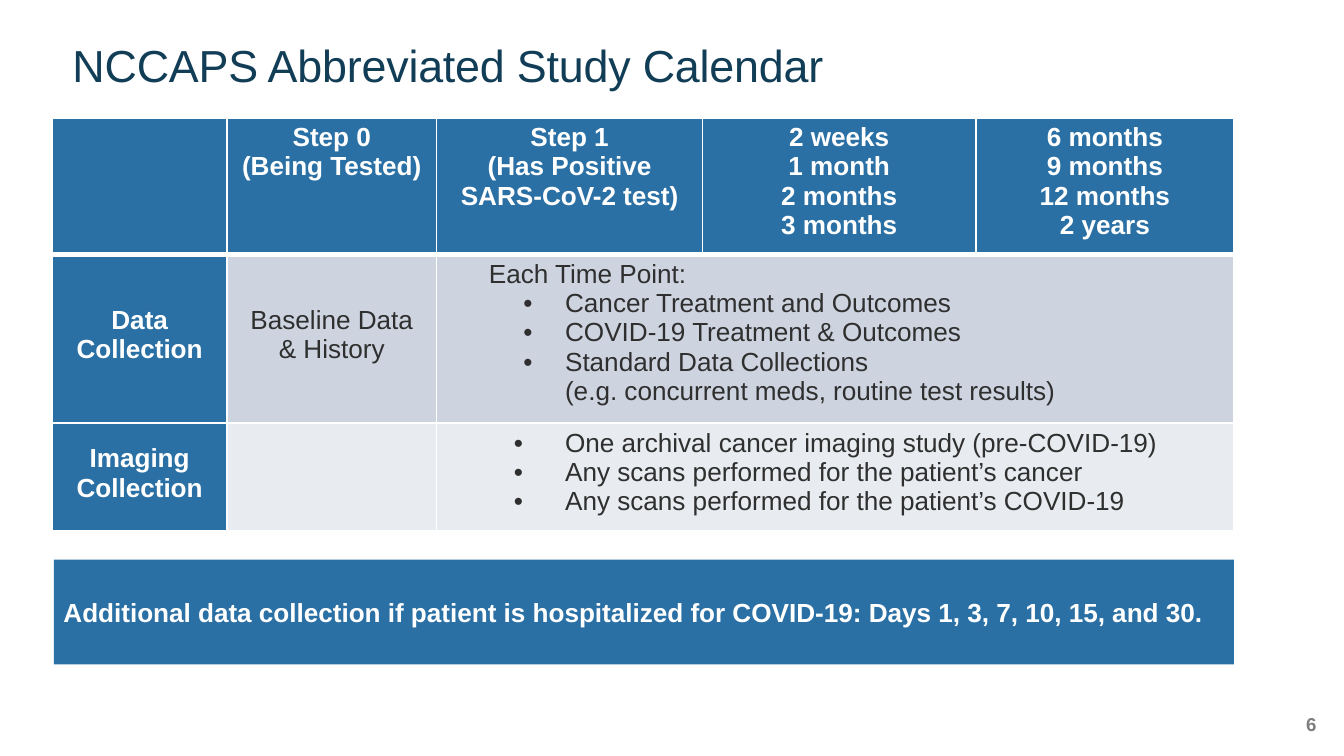
"""Build the study calendar slide."""
from lxml.etree import SubElement
from pptx import Presentation
from pptx.dml.color import RGBColor as Rgb
from pptx.enum.shapes import MSO_CONNECTOR as Link, MSO_SHAPE as Shape
from pptx.enum.text import MSO_ANCHOR as Anchor, MSO_AUTO_SIZE as Auto, PP_ALIGN as Align
from pptx.oxml.ns import qn
from pptx.util import Cm, Pt

FONT = "Arial"
HEX = {
    "blue": "2A70A4", "navy": "123D56", "ink": "2F2F2F", "white": "FFFFFF",
    "mist": "CDD4E0", "pale": "E8EBEF", "gray": "7E7E7E",
}
TITLE = "NCCAPS Abbreviated Study Calendar"
NOTE = "Additional data collection if patient is hospitalized for COVID-19: Days 1, 3, 7, 10, 15, and 30."
PAGE = "6"
HEAD = [
    [],
    ["Step 0", "(Being Tested)"],
    ["Step 1", "(Has Positive", "SARS-CoV-2 test)"],
    ["2 weeks", "1 month", "2 months", "3 months"],
    ["6 months", "9 months", "12 months", "2 years"],
]
ROWS = [
    {
        "name": ["Data", "Collection"], "base": ["Baseline Data", "& History"],
        "lead": "Each Time Point:",
        "list": ["Cancer Treatment and Outcomes", "COVID-19 Treatment & Outcomes",
                 "Standard Data Collections"],
        "tail": "(e.g. concurrent meds, routine test results)",
        "fill": "mist", "hang": 0.79, "top": 0.09, "lift": 0.15,
    },
    {
        "name": ["Imaging", "Collection"], "base": [],
        "lead": "",
        "list": ["One archival cancer imaging study (pre-COVID-19)",
                 "Any scans performed for the patient’s cancer",
                 "Any scans performed for the patient’s COVID-19"],
        "tail": "",
        "fill": "pale", "hang": 0.97, "top": 0.1, "lift": 0.12,
    },
]
WIDE = [3.3, 3.96, 5.03, 5.16, 4.88]
HIGH = [2.57, 3.18, 2.03]
LEFT, TOP = 0.99, 2.24
LEAD, TEXT = 0.99, 2.43
EDGES = [
    (0.99, 10.54, 0.99, 12.65, 1),
    (23.34, 10.54, 23.34, 12.65, 1),
    (0.99, 12.6, 23.37, 12.6, 3),
]


def rgb(name):
    return Rgb.from_string(HEX[name])


def write(para, text, color, size=14, bold=False, align=Align.LEFT, space=-3):
    para.alignment = align
    run = para.add_run()
    run.text = text
    font = run.font
    font.name, font.size, font.bold = FONT, Pt(size), bold
    font.color.rgb = rgb(color)
    run._r.get_or_add_rPr().set("spc", str(space))


def lines(frame):
    yield frame.paragraphs[0]
    while True:
        yield frame.add_paragraph()


def indent(para, left, hang=0):
    props = para._p.get_or_add_pPr()
    props.set("marL", str(Cm(left)))
    props.set("indent", str(-Cm(hang)))
    if hang:
        SubElement(props, qn("a:buFont"), typeface=FONT)
        SubElement(props, qn("a:buChar"), char="•")


def inset(box, top=0, left=0):
    box.margin_left, box.margin_top = Cm(left), Cm(top)
    box.margin_right = box.margin_bottom = 0


def style(cell, fill, row):
    props = cell._tc.get_or_add_tcPr()
    thick = {("B", 0), ("T", 1)}
    for side in "LRTB":
        width = 3 if (side, row) in thick else 1
        line = SubElement(props, qn(f"a:ln{side}"), w=str(Pt(width)))
        paint = SubElement(line, qn("a:solidFill"))
        SubElement(paint, qn("a:srgbClr"), val=HEX["white"])
    cell.fill.solid()
    cell.fill.fore_color.rgb = rgb(fill)
    inset(cell)


def center(cell, texts, color, bold):
    for text, para in zip(texts, lines(cell.text_frame)):
        write(para, text, color, bold=bold, align=Align.CENTER)


def detail(cell, row):
    cell.margin_top = Cm(row["top"])
    items = [(row["lead"], LEAD, 0)]
    items += [(text, TEXT, row["hang"]) for text in row["list"]]
    items += [(row["tail"], TEXT, 0)]
    shown = [item for item in items if item[0]]
    for (text, left, hang), para in zip(shown, lines(cell.text_frame)):
        indent(para, left, hang)
        write(para, text, "ink")


def grid(slide):
    frame = slide.shapes.add_table(len(HIGH), len(WIDE), Cm(LEFT), Cm(TOP),
                                   Cm(sum(WIDE)), Cm(sum(HIGH)))
    table = frame.table
    table.horz_banding = False
    for col, width in zip(table.columns, WIDE):
        col.width = Cm(width)
    for row, height in zip(table.rows, HIGH):
        row.height = Cm(height)
    for i in range(len(HIGH)):
        for j in range(len(WIDE)):
            fill = "blue" if i == 0 or j == 0 else ROWS[i - 1]["fill"]
            style(table.cell(i, j), fill, i)
    for j, texts in enumerate(HEAD):
        cell = table.cell(0, j)
        cell.margin_top = Cm(0.08)
        center(cell, texts, "white", True)
    for i, row in enumerate(ROWS, 1):
        name, base, more = (table.cell(i, j) for j in range(3))
        for cell in (name, base):
            cell.vertical_anchor = Anchor.MIDDLE
            cell.margin_bottom = Cm(row["lift"])
        center(name, row["name"], "white", True)
        center(base, row["base"], "ink", False)
        more.merge(table.cell(i, len(WIDE) - 1))
        detail(more, row)


def edge(slide, x, y, right, low, width):
    line = slide.shapes.add_connector(Link.STRAIGHT, Cm(x), Cm(y), Cm(right), Cm(low))
    line.line.color.rgb = rgb("white")
    line.line.width = Pt(width)
    SubElement(line._element.spPr, qn("a:effectLst"))


def main():
    deck = Presentation()
    deck.slide_width, deck.slide_height = Cm(25.4), Cm(14.28)
    slide = deck.slides.add_slide(deck.slide_layouts[5])

    title = slide.shapes.title
    title.left, title.top, title.width, title.height = Cm(1.37), Cm(0.69), Cm(14.38), Cm(1.09)
    frame = title.text_frame
    frame.auto_size, frame.vertical_anchor = Auto.NONE, Anchor.TOP
    inset(frame, 0.02)
    write(frame.paragraphs[0], TITLE, "navy", 24, space=-10)

    grid(slide)
    for ends in EDGES:
        edge(slide, *ends)

    band = slide.shapes.add_shape(Shape.RECTANGLE, Cm(1.02), Cm(10.57), Cm(22.3), Cm(1.98))
    band.shadow.inherit = False
    band.fill.solid()
    band.fill.fore_color.rgb = rgb("blue")
    band.line.fill.background()
    frame = band.text_frame
    frame.word_wrap, frame.vertical_anchor = True, Anchor.MIDDLE
    inset(frame, 0.02, 0.18)
    write(frame.paragraphs[0], NOTE, "white", bold=True)

    page = slide.shapes.add_textbox(Cm(24.2), Cm(13.46), Cm(0.68), Cm(0.48))
    frame = page.text_frame
    frame.word_wrap = True
    inset(frame)
    write(frame.paragraphs[0], PAGE, "gray", 10, True, Align.RIGHT)

    deck.save("out.pptx")


if __name__ == "__main__":
    main()
